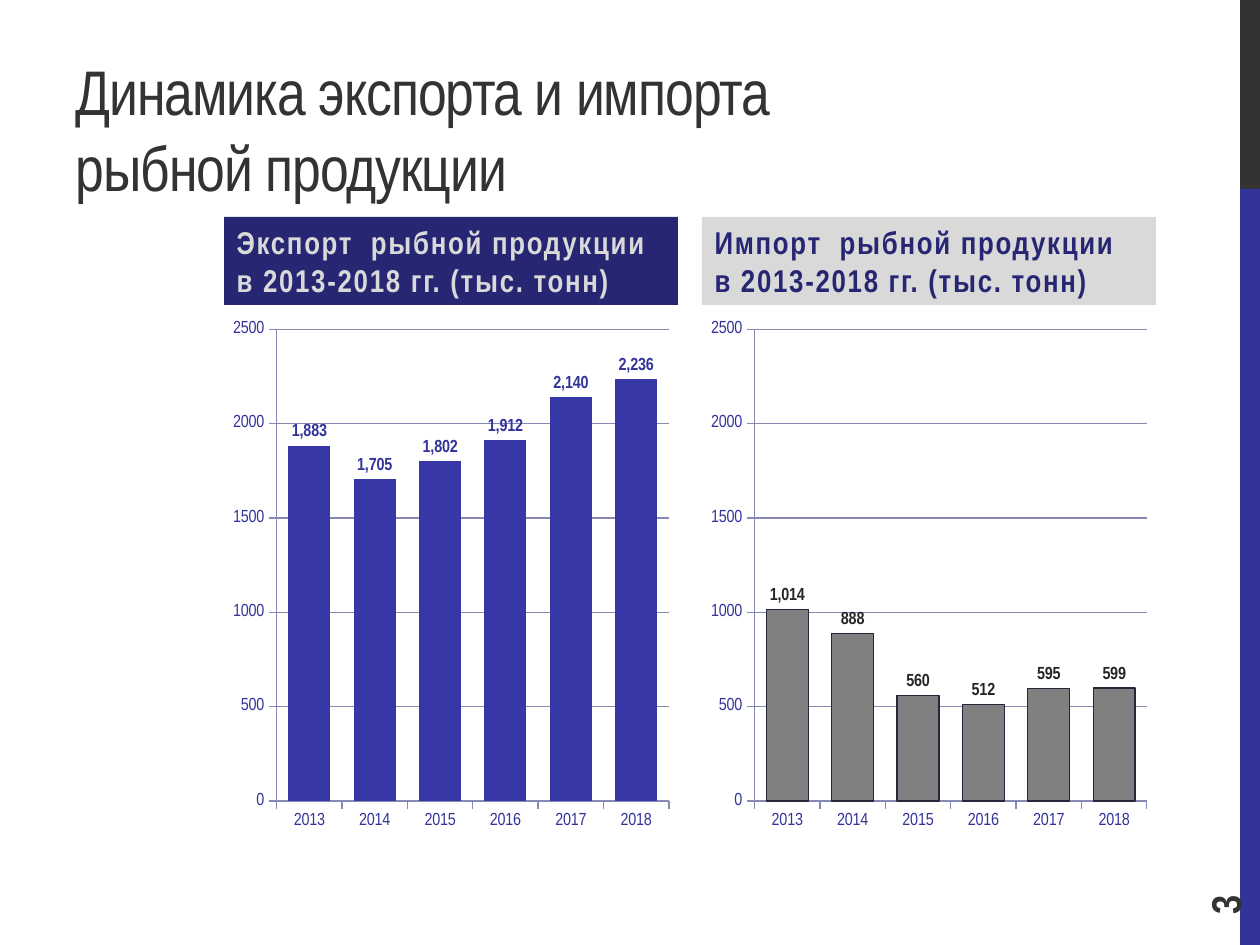
from lxml import etree
from pptx import Presentation
from pptx.chart.data import CategoryChartData
from pptx.dml.color import RGBColor
from pptx.enum.chart import XL_CHART_TYPE, XL_LABEL_POSITION, XL_TICK_MARK
from pptx.enum.shapes import MSO_SHAPE
from pptx.enum.text import MSO_ANCHOR, MSO_AUTO_SIZE, PP_ALIGN
from pptx.util import Emu, Pt

COLUMNS = XL_CHART_TYPE.COLUMN_CLUSTERED
OUTSIDE_END = XL_LABEL_POSITION.OUTSIDE_END
TICK_OUTSIDE = XL_TICK_MARK.OUTSIDE
RECTANGLE = MSO_SHAPE.RECTANGLE
BOTTOM, MIDDLE = MSO_ANCHOR.BOTTOM, MSO_ANCHOR.MIDDLE
NO_AUTOFIT = MSO_AUTO_SIZE.NONE
LEFT = PP_ALIGN.LEFT

FONT = "Arial Narrow"
DARK = RGBColor(0x33, 0x33, 0x33)
BLACKISH = RGBColor(0x26, 0x26, 0x26)
INDIGO = RGBColor(0x33, 0x33, 0x99)
NAVY = RGBColor(0x26, 0x26, 0x73)
MIDNIGHT = RGBColor(0x26, 0x26, 0x39)
BAR_BLUE = RGBColor(0x37, 0x37, 0xA7)
BAR_GRAY = RGBColor(0x80, 0x80, 0x80)
LIGHT_GRAY = RGBColor(0xD9, 0xD9, 0xD9)
GRID = RGBColor(0x88, 0x88, 0xB4)
WHITE = RGBColor(0xFF, 0xFF, 0xFF)

EMU_PER_PX = 914400 / 126
PANEL_WIDTH = 454
YEARS = [str(year) for year in range(2013, 2019)]
PANELS = [
    {"left": 224, "heading": 1, "spare": 2,
     "text": "Экспорт  рыбной продукции \vв 2013-2018 гг. (тыс. тонн)",
     "fill": NAVY, "color": LIGHT_GRAY, "bar": BAR_BLUE, "outline": None,
     "label": INDIGO, "values": [1883, 1705, 1802, 1912, 2140, 2236]},
    {"left": 702, "heading": 3, "spare": 4,
     "text": "Импорт  рыбной продукции \vв 2013-2018 гг. (тыс. тонн)",
     "fill": LIGHT_GRAY, "color": NAVY, "bar": BAR_GRAY, "outline": MIDNIGHT,
     "label": BLACKISH, "values": [1014, 888, 560, 512, 595, 599]},
]


def px(length):
    """Turn whole pixels into EMU."""
    return Emu(round(length * EMU_PER_PX))


def apply(target, formats):
    """Set every attribute named in a dict of format values."""
    for name, value in formats.items():
        setattr(target, name, value)


def place(shape, left, top, width, height):
    """Move and size a shape."""
    apply(shape, {"left": px(left), "top": px(top),
                  "width": px(width), "height": px(height)})


def style_font(font, size, color, bold=False):
    """Give a font the slide's typeface with a size and colour."""
    apply(font, {"name": FONT, "size": Pt(size), "bold": bold})
    font.color.rgb = color


def write(box, text, size, color, bold=False, spacing=0, anchor=BOTTOM, after=0):
    """Fill a box with one formatted paragraph."""
    frame = box.text_frame
    apply(frame, {"text": text, "word_wrap": True,
                  "auto_size": NO_AUTOFIT, "vertical_anchor": anchor})
    para = frame.paragraphs[0]
    apply(para, {"alignment": LEFT, "space_after": Pt(after)})
    for span in para.runs:
        style_font(span.font, size, color, bold)
        span.font._element.set("spc", str(spacing))


def add_band(page, top, height, color):
    """Draw one part of the strip on the right edge."""
    band = page.shapes.add_shape(
        RECTANGLE, px(1240), px(top), px(20), px(height))
    band.shadow.inherit = False
    band.fill.solid()
    band.fill.fore_color.rgb = color
    band.line.fill.background()


def fill_chart_background(chart):
    """Put a white, unlined background behind the whole chart."""
    space = chart._chartSpace
    namespaces = space.nsmap
    properties = etree.Element("{%s}spPr" % namespaces["c"])
    solid = etree.SubElement(properties, "{%s}solidFill" % namespaces["a"])
    etree.SubElement(solid, "{%s}srgbClr" % namespaces["a"], val=str(WHITE))
    line = etree.SubElement(properties, "{%s}ln" % namespaces["a"])
    etree.SubElement(line, "{%s}noFill" % namespaces["a"])
    space.chart.addnext(properties)


def style_axes(chart):
    """Format both axes and the horizontal grid."""
    values = chart.value_axis
    apply(values, {"minimum_scale": 0, "maximum_scale": 2500,
                   "major_unit": 500, "has_major_gridlines": True})
    for axis in (chart.category_axis, values):
        axis.major_tick_mark = TICK_OUTSIDE
        style_font(axis.tick_labels.font, 10, INDIGO)
    for part in (chart.category_axis, values, values.major_gridlines):
        part.format.line.color.rgb = GRID
        part.format.line.width = Pt(0.75)


def add_column_chart(page, panel):
    """Add the yearly column chart of one panel."""
    data = CategoryChartData()
    data.categories = YEARS
    data.add_series("Series 1", panel["values"])
    chart = page.shapes.add_chart(
        COLUMNS, px(panel["left"]), px(311), px(PANEL_WIDTH), px(529), data).chart
    apply(chart, {"has_legend": False, "has_title": False})
    style_font(chart.font, 10, INDIGO)
    fill_chart_background(chart)
    style_axes(chart)
    plot = chart.plots[0]
    apply(plot, {"gap_width": 56, "vary_by_categories": False,
                 "has_data_labels": True})
    apply(plot.data_labels, {"show_value": True, "position": OUTSIDE_END,
                             "number_format": "#,##0",
                             "number_format_is_linked": False})
    style_font(plot.data_labels.font, 10, panel["label"], True)
    look = plot.series[0].format
    look.fill.solid()
    look.fill.fore_color.rgb = panel["bar"]
    if panel["outline"]:
        look.line.color.rgb = panel["outline"]
        look.line.width = Pt(0.75)
    else:
        look.line.fill.background()


def add_panel(page, panel):
    """Build one heading with the chart below it."""
    holders = {holder.placeholder_format.idx: holder
               for holder in page.placeholders}
    heading, spare = holders[panel["heading"]], holders[panel["spare"]]
    spare.element.getparent().remove(spare.element)
    place(heading, panel["left"], 217, PANEL_WIDTH, 88)
    heading.fill.solid()
    heading.fill.fore_color.rgb = panel["fill"]
    write(heading, panel["text"], 18, panel["color"], True, 100, after=6)
    add_column_chart(page, panel)


def add_page_number(page):
    """Add the page number turned along the right edge."""
    box = page.shapes.add_textbox(px(1134), px(811), px(181), px(50))
    box.rotation = 270
    write(box, "3", 24, DARK, True, anchor=MIDDLE)


def main():
    """Build the slide and save it."""
    deck = Presentation()
    apply(deck, {"slide_width": px(1260), "slide_height": px(945)})
    page = deck.slides.add_slide(deck.slide_layouts.get_by_name("Comparison"))
    add_band(page, 0, 189, DARK)
    add_band(page, 189, 756, INDIGO)
    title = page.shapes.title
    place(title, 63, 21, 798, 189)
    write(title, "Динамика экспорта и импорта \vрыбной продукции",
          36, DARK, spacing=-60)
    for panel in PANELS:
        add_panel(page, panel)
    add_page_number(page)
    deck.save("out.pptx")


if __name__ == "__main__":
    main()
